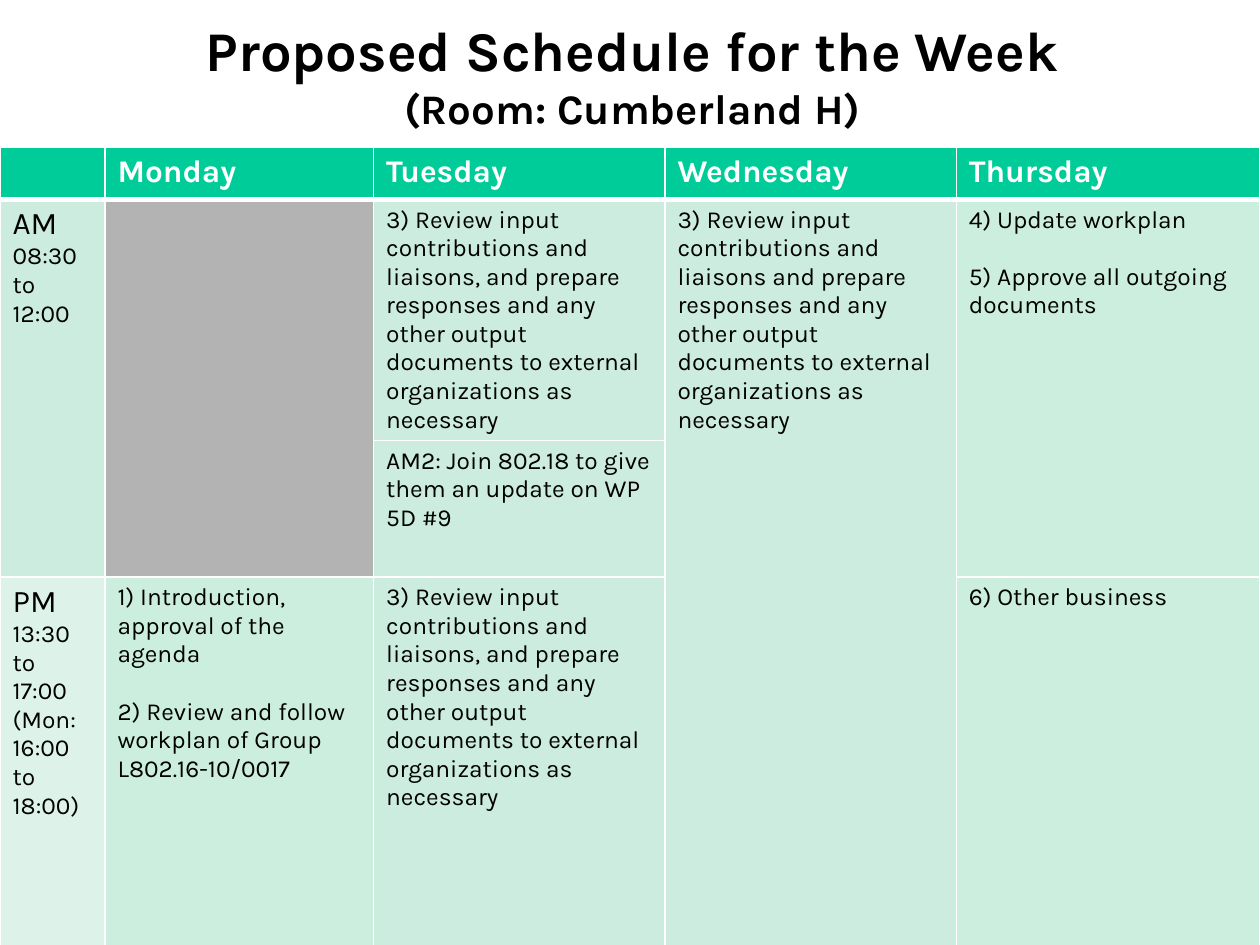
"""Build a one-slide weekly meeting schedule."""
from lxml.etree import SubElement
from pptx import Presentation
from pptx.dml.color import RGBColor as RGB
from pptx.enum.text import MSO_ANCHOR as ANCHOR, MSO_AUTO_SIZE as AUTOSIZE, PP_ALIGN as ALIGN
from pptx.oxml.ns import qn
from pptx.util import Pt

THEME = {
    "font": "Karla", "ink": "000000", "header_ink": "FFFFFF", "border": "FFFFFF",
    "header": "00CC99", "busy": "CBECDE", "open": "CCEEDF", "pm": "DDF3EA", "closed": "B3B3B3",
    "title": 32, "subtitle": 24, "heading": 18, "body": 14, "gap": 16.4,
}


def style(r, size, color="ink", bold=False):
    formats = {"name": THEME["font"], "size": Pt(THEME[size]), "bold": bold}
    for name, value in formats.items():
        setattr(r.font, name, value)
    r.font.color.rgb = RGB.from_string(THEME[color])


def add_borders(cell, row):
    tc_pr = cell._tc.get_or_add_tcPr()
    widths = {"lnL": 1, "lnR": 1, "lnT": 3 if row == 1 else 1, "lnB": 3 if row == 0 else 1}
    for i, (side, width) in enumerate(widths.items()):
        ln = SubElement(tc_pr, qn(f"a:{side}"), w=str(Pt(width)))
        fill = SubElement(ln, qn("a:solidFill"))
        SubElement(fill, qn("a:srgbClr"), val=THEME["border"])
        tc_pr.insert(i, ln)


prs = Presentation()
prs.slide_width, prs.slide_height = Pt(720), Pt(540)
s = prs.slides.add_slide(prs.slide_layouts[5])

title = s.shapes.title
box = {"left": Pt(36), "top": Pt(3.6), "width": Pt(648), "height": Pt(68.4)}
for name, value in box.items():
    setattr(title, name, value)
tf = title.text_frame
frame = {"auto_size": AUTOSIZE.NONE, "vertical_anchor": ANCHOR.TOP, "word_wrap": True,
         "margin_left": Pt(10), "margin_top": Pt(5)}
for name, value in frame.items():
    setattr(tf, name, value)
p = tf.paragraphs[0]
p.alignment = ALIGN.CENTER
r = p.add_run()
r.text = "Proposed Schedule for the Week"
style(r, "title", bold=True)
p.add_line_break()
r = p.add_run()
r.text = "(Room: Cumberland H)"
style(r, "subtitle", bold=True)

COLUMNS = [60, 153.5, 166.5, 166.5, 173.5]
ROWS = [29.5, 126, 78, 225]
DAYS = ["", "Monday", "Tuesday", "Wednesday", "Thursday"]
REVIEW = ("3) Review input contributions and liaisons{} and prepare responses and any "
          "other output documents to external organizations as necessary")
SESSIONS = [
    (1, 0, 2, "busy", ["AM", "08:30 to 12:00"]),
    (1, 1, 2, "closed", []),
    (1, 2, 1, "busy", [REVIEW.format(",")]),
    (1, 3, 3, "busy", [REVIEW.format("")]),
    (1, 4, 2, "open", ["4) Update workplan", "5) Approve all outgoing documents"]),
    (2, 2, 1, "busy", ["AM2: Join 802.18 to give them an update on WP 5D #9"]),
    (3, 0, 1, "pm", ["PM", "13:30 to 17:00", "(Mon: 16:00", "to", "18:00)"]),
    (3, 1, 1, "open", ["1) Introduction, approval of the agenda",
                       "2) Review and follow workplan of Group L802.16-10/0017"]),
    (3, 2, 1, "busy", [REVIEW.format(",")]),
    (3, 4, 1, "open", ["6) Other business"]),
]
headers = [(0, col, 1, "header", [day] if day else []) for col, day in enumerate(DAYS)]

table = s.shapes.add_table(len(ROWS), len(COLUMNS), Pt(0), Pt(84.4), Pt(sum(COLUMNS)),
                           Pt(sum(ROWS))).table
for column, width in zip(table.columns, COLUMNS):
    column.width = Pt(width)
for table_row, height in zip(table.rows, ROWS):
    table_row.height = Pt(height)

for row, col, span, fill, lines in headers + SESSIONS:
    cell = table.cell(row, col)
    if span > 1:
        cell.merge(table.cell(row + span - 1, col))
    cell.fill.solid()
    cell.fill.fore_color.rgb = RGB.from_string(THEME[fill])
    add_borders(cell, row)
    tf = cell.text_frame
    for i, line in enumerate(lines):
        p = tf.add_paragraph() if i else tf.paragraphs[0]
        r = p.add_run()
        r.text = line
        if row == 0:
            style(r, "heading", "header_ink", True)
        else:
            style(r, "heading" if col == 0 and i == 0 else "body")
        if i and col:
            p.space_before = Pt(THEME["gap"])

prs.save("out.pptx")
